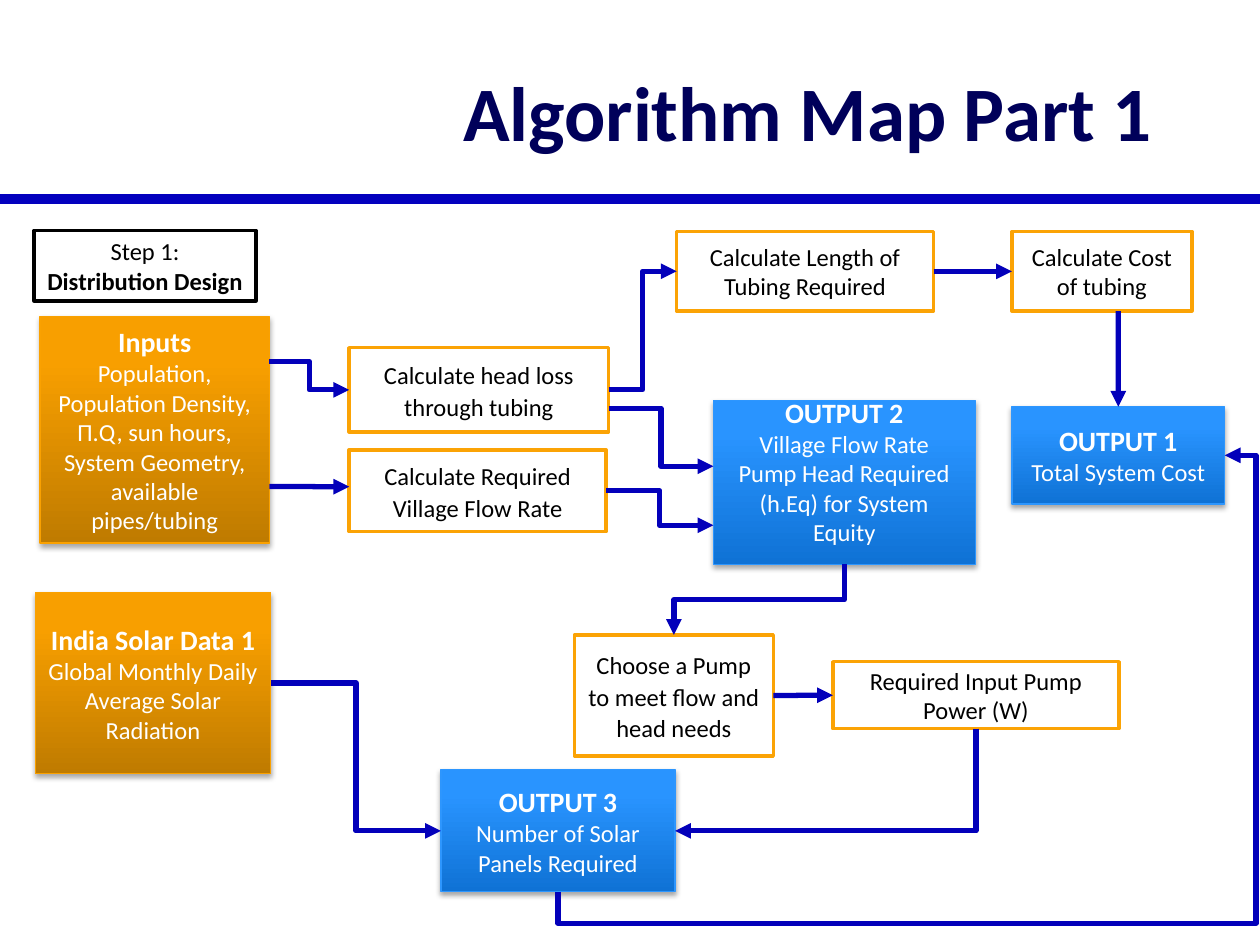
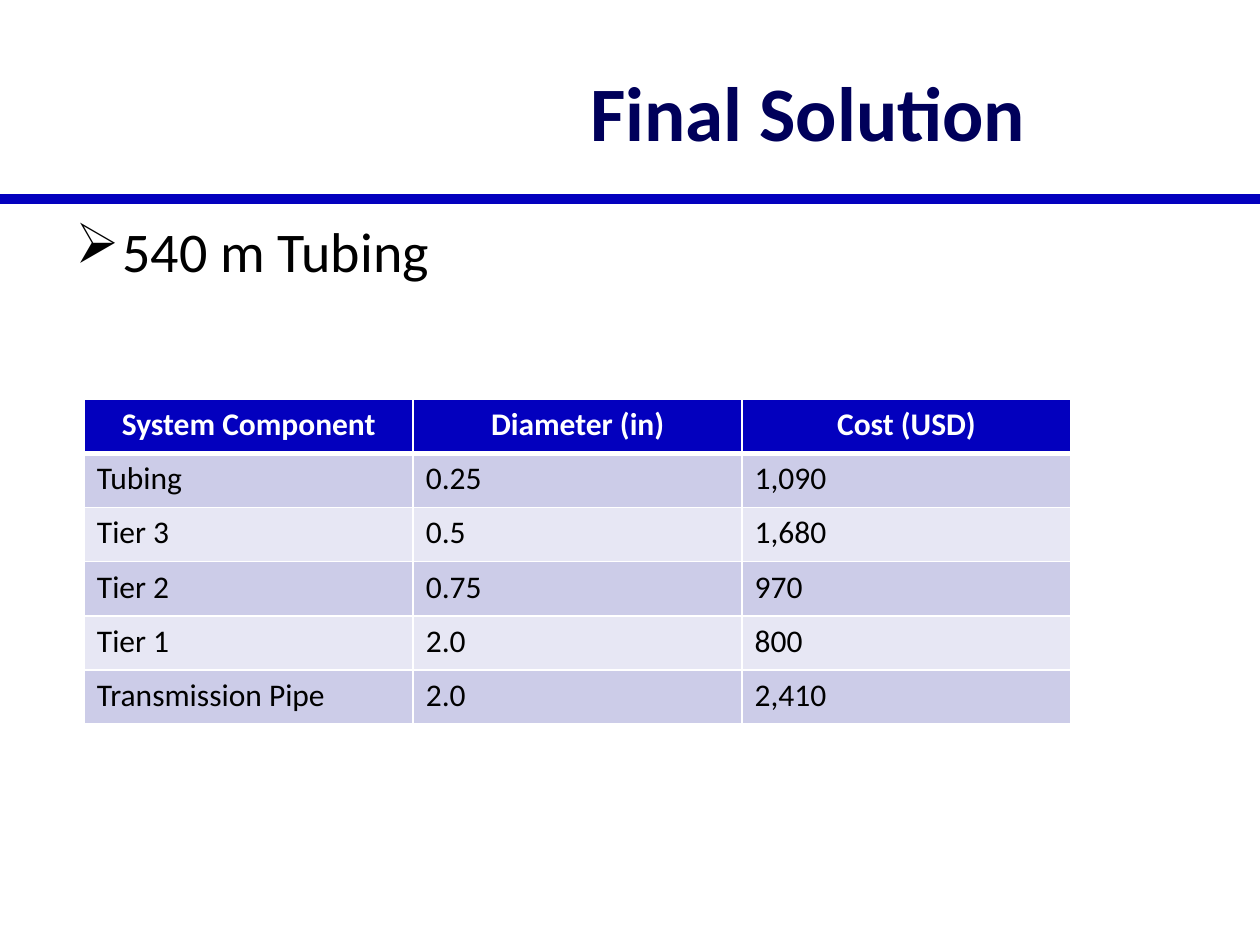
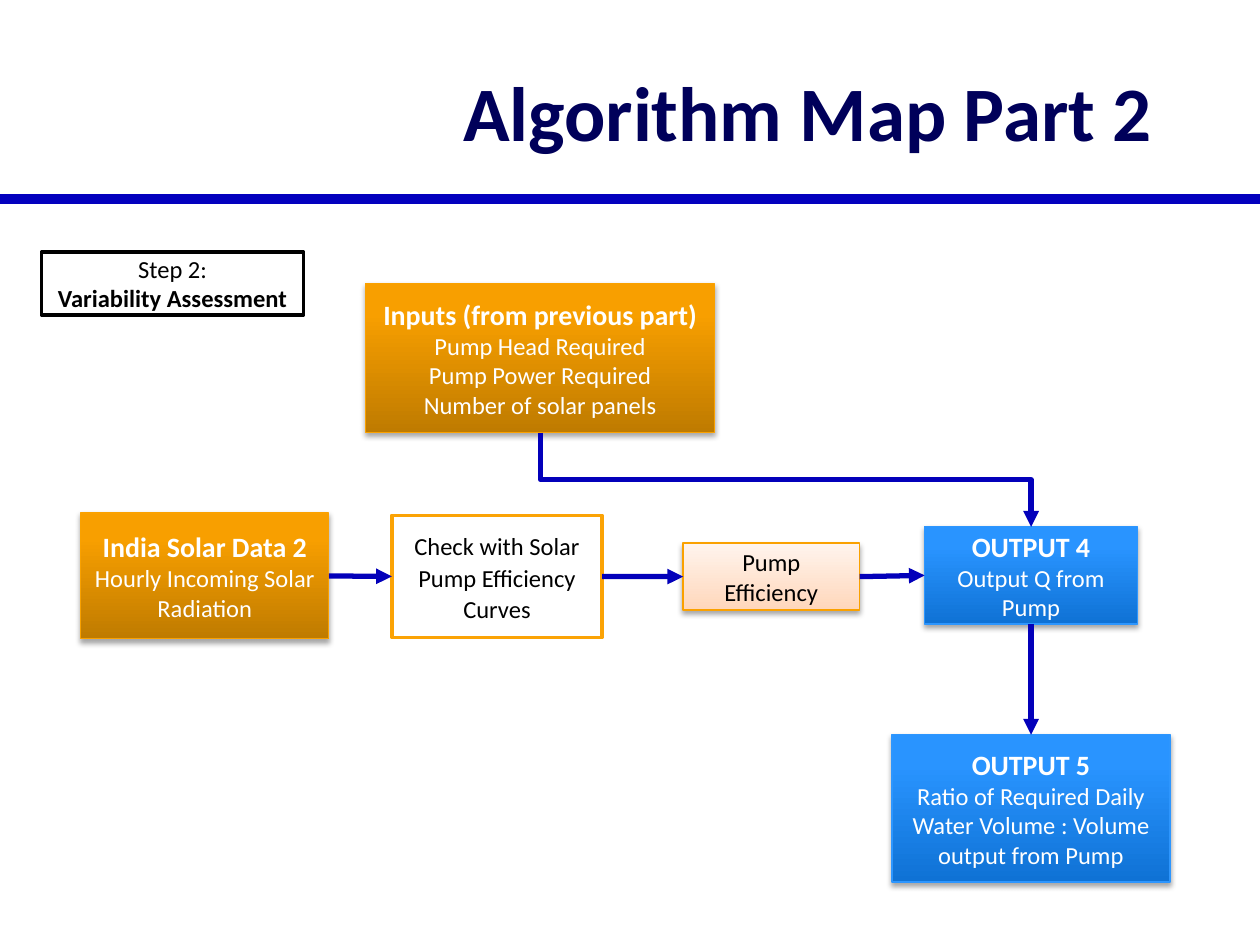
import dataclasses
import typing

import lxml.etree
import pptx
import pptx.dml.color
import pptx.enum.shapes
import pptx.enum.text
import pptx.oxml.ns
import pptx.util

Cm = pptx.util.Cm
Pt = pptx.util.Pt
RGBColor = pptx.dml.color.RGBColor
qn = pptx.oxml.ns.qn
CENTER = pptx.enum.text.PP_ALIGN.CENTER
MIDDLE = pptx.enum.text.MSO_ANCHOR.MIDDLE

# Shared look
FONT = "Calibri"
WHITE = RGBColor(0xFF, 0xFF, 0xFF)
BLACK = RGBColor(0x00, 0x00, 0x00)
NAVY = RGBColor(0x00, 0x00, 0x5A)
RULE_BLUE = RGBColor(0x03, 0x00, 0xBE)
ARROW_BLUE = RGBColor(0x03, 0x00, 0xBA)
ORANGE = RGBColor(0xFA, 0xA1, 0x00)
DARK_ORANGE = RGBColor(0xBF, 0x7B, 0x00)
BRIGHT_ORANGE = RGBColor(0xF8, 0x9F, 0x00)
FRAME_ORANGE = RGBColor(0xFB, 0xA3, 0x05)
PEACH = RGBColor(0xFF, 0xD7, 0xBB)
PALE_PEACH = RGBColor(0xFF, 0xF4, 0xED)
SKY = RGBColor(0x2D, 0x96, 0xFE)
DARK_SKY = RGBColor(0x0F, 0x72, 0xD5)
BRIGHT_SKY = RGBColor(0x29, 0x94, 0xFF)
BANDS = (RGBColor(0xCC, 0xCC, 0xE8), RGBColor(0xE7, 0xE7, 0xF4))

TOP, LEFT, BOTTOM, RIGHT = range(4)


@dataclasses.dataclass
class BoxStyle:
    line: RGBColor
    line_width: float = 2
    gradient: typing.Optional[tuple] = None  # bottom colour, top colour, end of blend
    text: RGBColor = BLACK
    heading_size: int = 14
    bold_paragraph: typing.Optional[int] = None
    line_spacing: float = 1.0


STYLES = {
    "step": BoxStyle(BLACK, bold_paragraph=1),
    "input": BoxStyle(ORANGE, 0.75, (DARK_ORANGE, BRIGHT_ORANGE, 0.8), WHITE, 16, 0),
    "output": BoxStyle(SKY, 0.75, (DARK_SKY, BRIGHT_SKY, 0.8), WHITE, 16, 0),
    "result": BoxStyle(ORANGE, 0.75, (PEACH, PALE_PEACH, 1)),
    "process": BoxStyle(FRAME_ORANGE, line_spacing=1.07),
    "quantity": BoxStyle(FRAME_ORANGE),
}

# Boxes: name -> style, (left, top, width, height) in cm, paragraphs
PART_1_BOXES = {
    "step": ("step", (0.69, 4.65, 4.47, 1.42), ["Step 1:", "Distribution Design"]),
    "inputs": ("input", (0.81, 6.38, 4.62, 4.57), [
        "Inputs",
        "Population, Population Density, Π.Q, sun hours, System Geometry, available pipes/tubing"]),
    "length": ("quantity", (13.64, 4.67, 5.18, 1.6), ["Calculate Length of Tubing Required"]),
    "cost": ("quantity", (20.4, 4.67, 3.63, 1.6), ["Calculate Cost of tubing"]),
    "solar data": ("input", (0.71, 11.94, 4.75, 3.66), [
        "India Solar Data 1", "Global Monthly Daily Average Solar Radiation"]),
    "output 1": ("output", (20.4, 8.2, 4.29, 1.96), ["OUTPUT 1", "Total System Cost"]),
    "flow rate": ("process", (7.04, 9.07, 5.18, 1.65), ["Calculate Required Village Flow Rate"]),
    "head loss": ("process", (7.04, 7.01, 5.23, 1.7), ["Calculate head loss through tubing"]),
    "output 2": ("output", (14.38, 8.08, 5.28, 3.3), [
        "OUTPUT 2", "Village Flow Rate", "Pump Head Required (h.Eq) for System Equity"]),
    "output 3": ("output", (8.89, 15.52, 4.72, 2.46), [
        "OUTPUT 3", "Number of Solar Panels Required"]),
    "pump": ("process", (11.58, 12.8, 4.01, 2.44), ["Choose a Pump to meet flow and head needs"]),
    "power": ("quantity", (16.79, 13.34, 5.77, 1.35), ["Required Input Pump Power (W)"]),
}
PART_2_BOXES = {
    "step": ("step", (0.84, 5.08, 5.28, 1.27), ["Step 2:", "Variability Assessment"]),
    "solar data": ("input", (1.63, 10.34, 5, 2.54), [
        "India Solar Data 2", "Hourly Incoming Solar Radiation"]),
    "curves": ("process", (7.9, 10.39, 4.24, 2.46), ["Check with Solar Pump Efficiency Curves"]),
    "efficiency": ("result", (13.77, 10.95, 3.56, 1.35), ["Pump Efficiency"]),
    "output 5": ("output", (17.98, 14.81, 5.61, 2.97), [
        "OUTPUT 5", "Ratio of Required Daily Water Volume : Volume output from Pump"]),
    "output 4": ("output", (18.64, 10.62, 4.29, 1.96), ["OUTPUT 4", "Output Q from Pump"]),
    "inputs": ("input", (7.37, 5.72, 7.04, 3), [
        "Inputs (from previous part)", "Pump Head Required", "Pump Power Required",
        "Number of solar panels"]),
}

# Arrow ends: box, side, place along the side (the middle when left out)
PART_1_STRAIGHT = [
    (("inputs", RIGHT, 0.75), ("flow rate", LEFT, 0.45)),
    (("length", RIGHT), ("cost", LEFT)),
    (("cost", BOTTOM, 0.59), ("output 1", TOP)),
    (("pump", RIGHT), ("power", LEFT)),
]
PART_1_BENT = [
    (("inputs", RIGHT, 0.2), ("head loss", LEFT)),
    (("flow rate", RIGHT), ("output 2", LEFT, 0.76)),
    (("head loss", RIGHT), ("length", LEFT)),
    (("head loss", RIGHT, 0.72), ("output 2", LEFT, 0.4)),
    (("output 2", BOTTOM), ("pump", TOP)),
    (("solar data", RIGHT), ("output 3", LEFT)),
    (("power", BOTTOM), ("output 3", RIGHT), "bentConnector2"),
    (("output 3", BOTTOM), ("output 1", RIGHT), "bentConnector4", (-7200, 104700)),
]
PART_2_STRAIGHT = [
    (("solar data", RIGHT), ("curves", LEFT)),
    (("curves", RIGHT), ("efficiency", LEFT)),
    (("efficiency", RIGHT), ("output 4", LEFT)),
    (("output 4", BOTTOM), ("output 5", TOP)),
]
PART_2_BENT = [(("inputs", BOTTOM), ("output 4", TOP))]

COSTS = [
    ("System Component", "Diameter (in)", "Cost (USD)"),
    ("Tubing", "0.25", "1,090"),
    ("Tier 3", "0.5", "1,680"),
    ("Tier 2", "0.75", "970"),
    ("Tier 1", "2.0", "800"),
    ("Transmission Pipe", "2.0", "2,410"),
]


def add_element(parent, tag, **attributes):
    return lxml.etree.SubElement(parent, qn(tag), attributes)


def format_paragraph(paragraph, size, color, bold=False, alignment=None):
    paragraph.alignment = alignment
    for run in paragraph.runs:
        run.font.name = FONT
        run.font.size = Pt(size)
        run.font.bold = bold
        run.font.color.rgb = color


def format_connector(connector, color, width):
    connector.line.color.rgb = color
    connector.line.width = Pt(width)
    add_element(connector._element.spPr, "a:effectLst")


def add_titled_slide(presentation, title):
    slide = presentation.slides.add_slide(presentation.slide_layouts[5])
    rule = slide.shapes.add_connector(
        pptx.enum.shapes.MSO_CONNECTOR.STRAIGHT, 0, Cm(4.01), presentation.slide_width, Cm(4.01))
    format_connector(rule, RULE_BLUE, 6)
    shape = slide.shapes.title
    shape.left, shape.top, shape.width, shape.height = Cm(7.82), Cm(0.64), Cm(16.94), Cm(3.18)
    shape.text_frame.text = title
    shape.text_frame.vertical_anchor = MIDDLE
    format_paragraph(shape.text_frame.paragraphs[0], 44, NAVY, True, CENTER)
    return slide


def add_box(slide, style_name, frame, lines):
    style = STYLES[style_name]
    box = slide.shapes.add_shape(pptx.enum.shapes.MSO_SHAPE.RECTANGLE, *map(Cm, frame))
    box.shadow.inherit = False
    box.line.color.rgb = style.line
    box.line.width = Pt(style.line_width)
    if style.gradient:
        bottom, top, blend_end = style.gradient
        box.fill.gradient()
        box.fill.gradient_angle = 90
        first, last = box.fill.gradient_stops
        first.color.rgb, first.position = bottom, 0
        last.color.rgb, last.position = top, blend_end
        shadow = add_element(box._element.spPr.find(qn("a:effectLst")), "a:outerShdw",
                             blurRad="39400", dist="22900", dir="5400000", rotWithShape="0")
        add_element(add_element(shadow, "a:srgbClr", val=str(BLACK)), "a:alpha", val="35000")
    else:
        box.fill.solid()
        box.fill.fore_color.rgb = WHITE

    text_frame = box.text_frame
    text_frame.word_wrap = True
    text_frame.vertical_anchor = MIDDLE
    text_frame.text = "\n".join(lines)
    for index, paragraph in enumerate(text_frame.paragraphs):
        size = style.heading_size if index == 0 else 14
        format_paragraph(paragraph, size, style.text, index == style.bold_paragraph, CENTER)
        paragraph.line_spacing = style.line_spacing
    return box


def locate(boxes, name, side, place=0.5):
    left, top, width, height = boxes[name][1]
    if side in (TOP, BOTTOM):
        return left + place * width, top + height * (side == BOTTOM)
    return left + width * (side == RIGHT), top + place * height


def add_arrow(slide, kind, start, end):
    arrow = slide.shapes.add_connector(kind, *map(Cm, (*start, *end)))
    format_connector(arrow, ARROW_BLUE, 3)
    add_element(arrow._element.spPr.find(qn("a:ln")), "a:tailEnd", type="triangle")
    return arrow


def add_straight_arrow(slide, boxes, shapes, start, end):
    arrow = add_arrow(slide, pptx.enum.shapes.MSO_CONNECTOR.STRAIGHT,
                      locate(boxes, *start), locate(boxes, *end))
    for connect, site in ((arrow.begin_connect, start), (arrow.end_connect, end)):
        if len(site) == 2:
            connect(shapes[site[0]], site[1])


def add_bent_arrow(slide, boxes, start, end, preset="bentConnector3", adjustments=()):
    leaves_downward = start[1] == BOTTOM
    (x1, y1), (x2, y2) = start_point, end_point = locate(boxes, *start), locate(boxes, *end)
    # A bend that starts vertically is a horizontal one turned about its centre
    turn = -1 if x2 > x1 and y2 > y1 else 1
    if leaves_downward:
        center_x, center_y = (x1 + x2) / 2, (y1 + y2) / 2
        start_point, end_point = [
            (center_x + turn * (y - center_y), center_y - turn * (x - center_x))
            for x, y in (start_point, end_point)]
    arrow = add_arrow(slide, pptx.enum.shapes.MSO_CONNECTOR.ELBOW, start_point, end_point)
    properties = arrow._element.spPr
    if leaves_downward:
        properties.find(qn("a:xfrm")).set("rot", str(turn * 90 % 360 * 60000))
    geometry = properties.find(qn("a:prstGeom"))
    geometry.set("prst", preset)
    for number, value in enumerate(adjustments, 1):
        add_element(geometry.find(qn("a:avLst")), "a:gd", name=f"adj{number}", fmla=f"val {value}")


def add_flow_slide(presentation, title, boxes, straight_arrows, bent_arrows):
    slide = add_titled_slide(presentation, title)
    shapes = {name: add_box(slide, *box) for name, box in boxes.items()}
    for ends in straight_arrows:
        add_straight_arrow(slide, boxes, shapes, *ends)
    for ends in bent_arrows:
        add_bent_arrow(slide, boxes, *ends)
    return shapes


def add_cell_borders(cell, widths):
    properties = cell._tc.get_or_add_tcPr()
    for side, width in zip("LRTB", widths):
        line = add_element(properties, f"a:ln{side}", w=str(Pt(width)))
        add_element(add_element(line, "a:solidFill"), "a:srgbClr", val=str(WHITE))


def add_solution_slide(presentation):
    slide = add_titled_slide(presentation, "Final Solution")

    # Bulleted statement
    text_frame = slide.shapes.add_textbox(Cm(1.27), Cm(4.24), Cm(16.08), Cm(12.9)).text_frame
    text_frame.word_wrap = True
    text_frame.text = "540 m Tubing"
    paragraph = text_frame.paragraphs[0]
    properties = paragraph._p.get_or_add_pPr()
    properties.set("marL", str(Cm(0.95)))
    properties.set("indent", str(-Cm(0.95)))
    add_element(properties, "a:buChar", char="➢")
    format_paragraph(paragraph, 32, BLACK)

    # Cost table
    table = slide.shapes.add_table(
        len(COSTS), len(COSTS[0]), Cm(1.7), Cm(8.05), Cm(19.89), Cm(6.55)).table
    for row, values in enumerate(COSTS):
        is_header = row == 0
        for column, value in enumerate(values):
            cell = table.cell(row, column)
            add_cell_borders(cell, (1, 1, 3 if row == 1 else 1, 3 if is_header else 1))
            cell.fill.solid()
            cell.fill.fore_color.rgb = RULE_BLUE if is_header else BANDS[(row - 1) % 2]
            cell.text_frame.text = value
            format_paragraph(cell.text_frame.paragraphs[0], 18, WHITE if is_header else BLACK,
                             is_header, CENTER if is_header else None)


def main():
    presentation = pptx.Presentation()
    presentation.slide_width, presentation.slide_height = Cm(25.4), Cm(19.05)
    shapes = add_flow_slide(presentation, "Algorithm Map Part 1",
                            PART_1_BOXES, PART_1_STRAIGHT, PART_1_BENT)
    shapes["output 2"].text_frame.margin_bottom = Cm(0.6)
    add_solution_slide(presentation)
    add_flow_slide(presentation, "Algorithm Map Part 2",
                   PART_2_BOXES, PART_2_STRAIGHT, PART_2_BENT)
    presentation.save("out.pptx")


if __name__ == "__main__":
    main()
